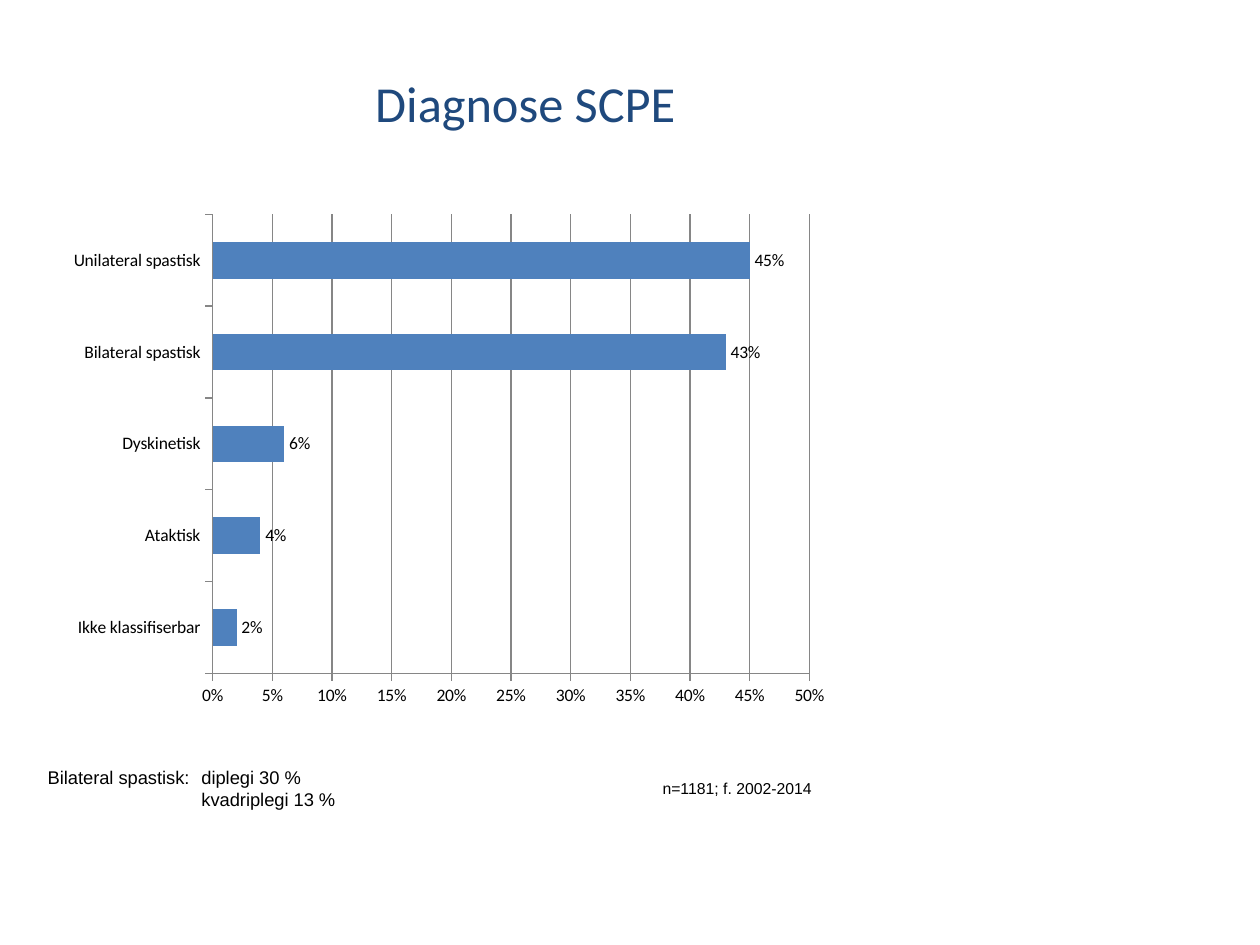
from lxml.etree import SubElement
from pptx import Presentation
from pptx.chart.data import CategoryChartData
from pptx.dml.color import RGBColor
from pptx.enum.chart import XL_CHART_TYPE, XL_LABEL_POSITION, XL_TICK_MARK
from pptx.enum.text import MSO_ANCHOR, MSO_AUTO_SIZE, PP_ALIGN
from pptx.oxml import parse_xml
from pptx.oxml.ns import nsdecls, qn
from pptx.util import Inches, Pt

NAVY = RGBColor(0x1F, 0x49, 0x7D)
BLUE = RGBColor(0x4F, 0x81, 0xBD)
GREY = RGBColor(0x86, 0x86, 0x86)
BLACK = RGBColor(0, 0, 0)


def add_run(paragraph, text, size, font_name, color):
    run = paragraph.add_run()
    run.text = text
    run.font.size = Pt(size)
    run.font.name = font_name
    run.font.color.rgb = color


prs = Presentation()
prs.slide_width = Inches(10)
prs.slide_height = Inches(7.5)
slide = prs.slides.add_slide(prs.slide_layouts[5])

# Title, sitting in the upper part of its box
title = slide.shapes.title
title.left, title.top = Inches(2.09), Inches(0.6)
title.width, title.height = Inches(4.25), Inches(0.79)
heading = title.text_frame
heading.auto_size = MSO_AUTO_SIZE.NONE
heading.vertical_anchor = MSO_ANCHOR.MIDDLE
heading.margin_top, heading.margin_bottom = 0, Inches(0.37)
heading.margin_right = Inches(0.19)
heading.paragraphs[0].alignment = PP_ALIGN.CENTER
add_run(heading.paragraphs[0], "Diagnose SCPE", 28.8, "Calibri", NAVY)

# Share of each diagnosis, listed from the bottom bar up
diagnoses = CategoryChartData(number_format="0%")
diagnoses.categories = ["Ikke klassifiserbar", "Ataktisk", "Dyskinetisk",
                        "Bilateral spastisk", "Unilateral spastisk"]
diagnoses.add_series("Series 1", [0.02, 0.04, 0.06, 0.43, 0.45])
chart = slide.shapes.add_chart(
    XL_CHART_TYPE.BAR_CLUSTERED, Inches(0.28), Inches(1.62),
    Inches(6.4), Inches(4.05), diagnoses).chart
chart.has_title = False
chart.has_legend = False
chart.font.size = Pt(10)
chart.font.name = "Calibri"
chart.font.color.rgb = BLACK

plot = chart.plots[0]
plot.gap_width = 150
plot.vary_by_categories = False
bars = plot.series[0]
bars.format.fill.solid()
bars.format.fill.fore_color.rgb = BLUE
labels = bars.data_labels
labels.show_value = True
labels.number_format = "0%"
labels.number_format_is_linked = False
labels.position = XL_LABEL_POSITION.OUTSIDE_END

shares = chart.value_axis
shares.minimum_scale, shares.maximum_scale, shares.major_unit = 0, 0.5, 0.05
shares.tick_labels.number_format = "0%"
shares.tick_labels.number_format_is_linked = False
shares.has_major_gridlines = True
shares.major_gridlines.format.line.color.rgb = GREY
for axis in (chart.category_axis, shares):
    axis.major_tick_mark = XL_TICK_MARK.OUTSIDE
    axis.format.line.color.rgb = GREY

# Fixed inner plot area, as fractions of the chart
plot_area = chart._chartSpace.chart.plotArea
for old_layout in plot_area.findall(qn("c:layout")):
    plot_area.remove(old_layout)
fractions = "".join(f'<c:{key} val="{value}"/>' for key, value in
                    (("x", 0.22), ("y", 0.02), ("w", 0.74), ("h", 0.9)))
plot_area.insert(0, parse_xml(
    f'<c:layout {nsdecls("c")}><c:manualLayout><c:layoutTarget val="inner"/>'
    f'<c:xMode val="edge"/><c:yMode val="edge"/>{fractions}'
    '</c:manualLayout></c:layout>'))

# Sample size
sample = slide.shapes.add_textbox(
    Inches(5.16), Inches(6.13), Inches(1.51), Inches(0.25)).text_frame
sample.word_wrap = True
sample.auto_size = MSO_AUTO_SIZE.SHAPE_TO_FIT_TEXT
add_run(sample.paragraphs[0], "n=1181; f. 2002-2014", 9, "Arial", BLACK)

# Breakdown of the bilateral group, both subtypes at one indent
breakdown = slide.shapes.add_textbox(
    Inches(0.28), Inches(6.03), Inches(2.58), Inches(0.45)).text_frame
breakdown.word_wrap = False
breakdown.auto_size = MSO_AUTO_SIZE.SHAPE_TO_FIT_TEXT
subtype_indent = str(Inches(1.22))
diplegia = breakdown.paragraphs[0]
tabs = SubElement(diplegia._p.get_or_add_pPr(), qn("a:tabLst"))
SubElement(tabs, qn("a:tab"), pos=subtype_indent, algn="l")
add_run(diplegia, "Bilateral spastisk:\tdiplegi 30 %", 10.5, "Arial", BLACK)
quadriplegia = breakdown.add_paragraph()
quadriplegia._p.get_or_add_pPr().set("marL", subtype_indent)
add_run(quadriplegia, "kvadriplegi 13 %", 10.5, "Arial", BLACK)

prs.save("out.pptx")
